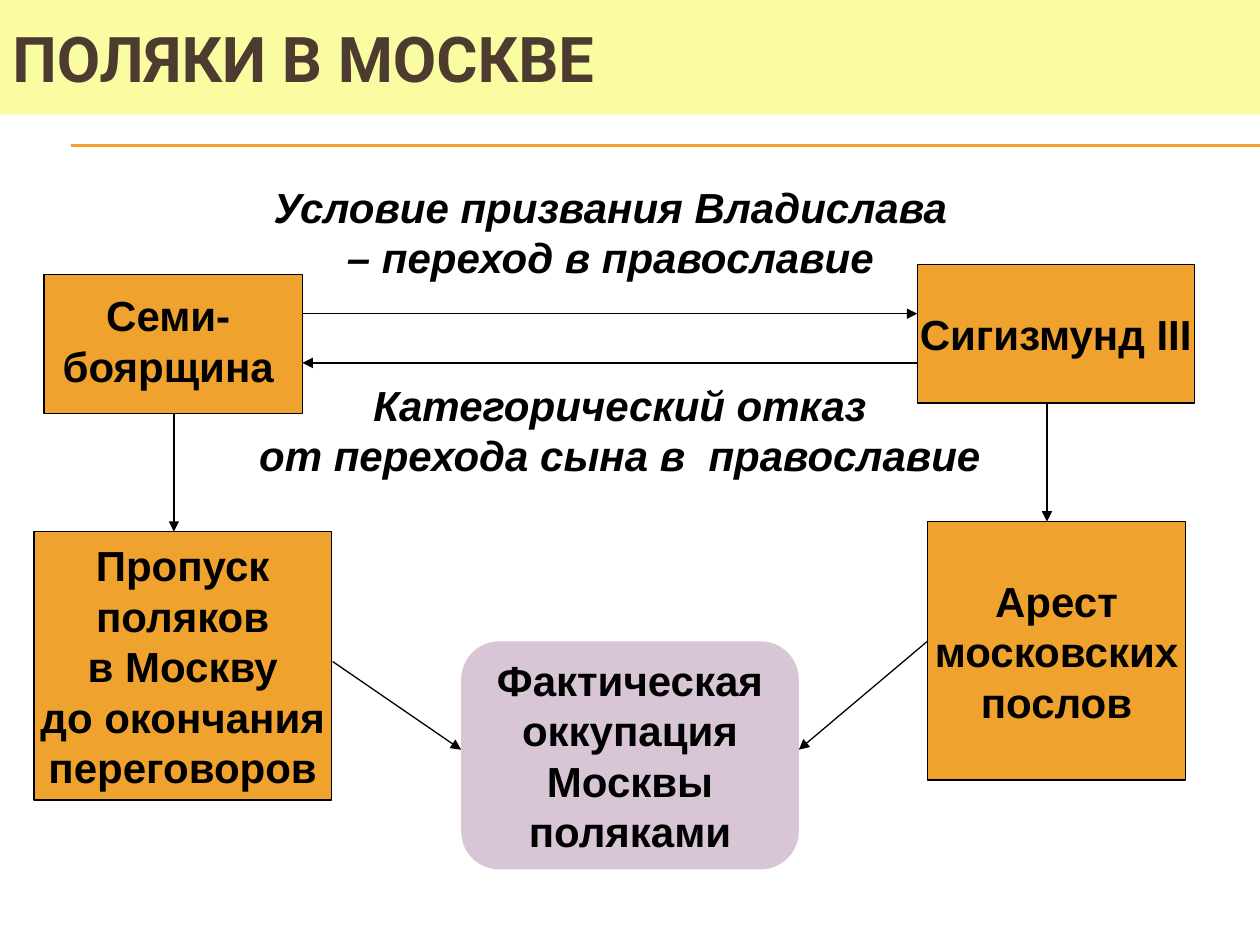
"""Build the slide about the Poles in Moscow."""
from lxml import etree
from pptx import Presentation
from pptx.dml.color import RGBColor
from pptx.enum import shapes, text
from pptx.oxml import ns
from pptx.util import Inches, Pt

BLACK = RGBColor(0x00, 0x00, 0x00)
BROWN = RGBColor(0x4E, 0x3B, 0x30)
ORANGE = RGBColor(0xF0, 0xA2, 0x2E)
YELLOW = RGBColor(0xFA, 0xFC, 0xA2)
LILAC = RGBColor(0xD8, 0xC6, 0xD7)

TITLE = "ПОЛЯКИ В МОСКВЕ"
BOXES = [
    ((0.35, 2.18, 2.05, 1.1), []),
    ((7.28, 2.1, 2.2, 1.1), ["Сигизмунд III"]),
    ((0.27, 4.22, 2.36, 2.13),
     ["Пропуск\nполяков", "в Москву", "до окончания", "переговоров"]),
    ((7.36, 4.14, 2.05, 2.05), ["Арест\nмосковских\nпослов"]),
]
RESULT = ((3.66, 5.09, 2.68, 1.81), ["Фактическая\nоккупация\nМосквы\nполяками"])
LABELS = [
    ((2.01, 1.39, 5.67, 0.9), "Условие призвания Владислава – переход в православие", True),
    ((1.93, 2.96, 5.98, 0.9), "Категорический отказ\nот перехода сына в  православие", True),
    ((0.35, 2.25, 1.97, 0.9), "Семи-боярщина", False),
]
ARROWS = [
    ((2.4, 2.49), (7.28, 2.49)),
    ((7.28, 2.88), (2.4, 2.88)),
    ((1.38, 3.28), (1.38, 4.22)),
    ((8.31, 3.2), (8.31, 4.14)),
    ((2.64, 5.25), (3.66, 5.95)),
    ((7.36, 5.09), (6.34, 5.95)),
]
RULES = [((0.56, y), (10, y)) for y in (1.15, 1.16)]


def write(shape, paragraphs, size=24, font="Arial", color=BLACK, italic=False,
          align=text.PP_ALIGN.CENTER, anchor=text.MSO_ANCHOR.MIDDLE, wrap=False):
    frame = shape.text_frame
    frame.word_wrap = wrap
    frame.vertical_anchor = anchor
    for index, content in enumerate(paragraphs):
        paragraph = frame.add_paragraph() if index else frame.paragraphs[0]
        paragraph.text = content
        paragraph.alignment = align
        for run in paragraph.runs:
            run.font.size = Pt(size)
            run.font.name = font
            run.font.bold = True
            run.font.italic = italic
            run.font.color.rgb = color


def add_box(slide, place, fill, outline=None, kind=shapes.MSO_SHAPE.RECTANGLE):
    shape = slide.shapes.add_shape(kind, *map(Inches, place))
    shape.shadow.inherit = False
    shape.fill.solid()
    shape.fill.fore_color.rgb = fill
    if outline is None:
        shape.line.fill.background()
    else:
        shape.line.color.rgb = outline
        shape.line.width = Pt(0.75)
    return shape


def add_line(slide, start, end, color, arrow=False):
    line = slide.shapes.add_connector(
        shapes.MSO_CONNECTOR.STRAIGHT, *map(Inches, start + end))
    line.line.color.rgb = color
    line.line.width = Pt(0.75)
    if arrow:
        etree.SubElement(line.line._get_or_add_ln(), ns.qn("a:tailEnd"), type="triangle")
    etree.SubElement(line._element.spPr, ns.qn("a:effectLst"))


def main():
    presentation = Presentation()
    presentation.slide_width, presentation.slide_height = Inches(10), Inches(7.5)
    slide = presentation.slides.add_slide(presentation.slide_layouts[6])

    for start, end in RULES:
        add_line(slide, start, end, ORANGE)
    title = add_box(slide, (0, 0, 10, 0.91), YELLOW)
    write(title, [TITLE], size=36, font="Roboto", color=BROWN,
          align=text.PP_ALIGN.LEFT, wrap=True)

    for place, paragraphs in BOXES:
        write(add_box(slide, place, ORANGE, BLACK), paragraphs)
    place, paragraphs = RESULT
    result = add_box(slide, place, LILAC, kind=shapes.MSO_SHAPE.ROUNDED_RECTANGLE)
    write(result, paragraphs)

    for place, content, italic in LABELS:
        label = slide.shapes.add_textbox(*map(Inches, place))
        write(label, [content], italic=italic, anchor=text.MSO_ANCHOR.TOP, wrap=True)
    for start, end in ARROWS:
        add_line(slide, start, end, BLACK, arrow=True)

    presentation.save("out.pptx")


if __name__ == "__main__":
    main()
